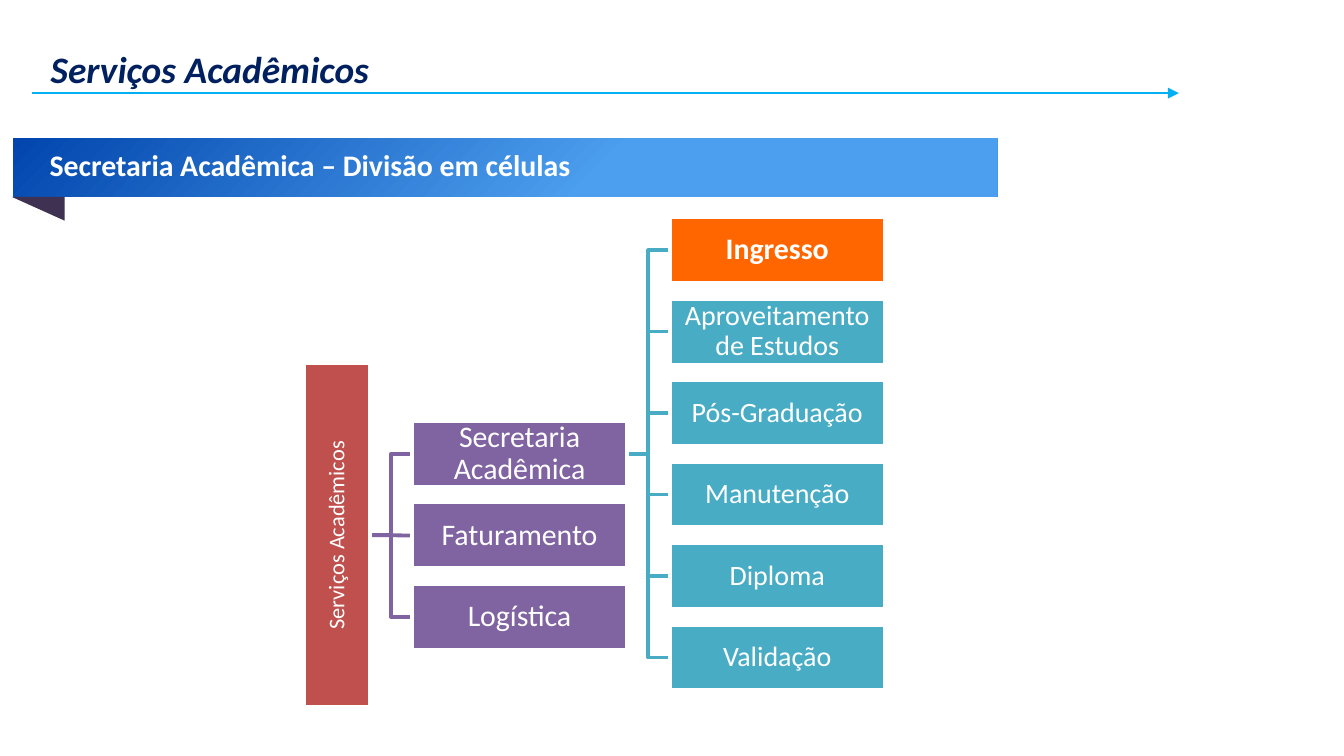
from lxml.etree import SubElement
from pptx import Presentation
from pptx.dml.color import RGBColor
from pptx.enum.shapes import MSO_CONNECTOR, MSO_SHAPE
from pptx.enum.text import MSO_ANCHOR, PP_ALIGN
from pptx.oxml.ns import qn
from pptx.util import Cm, Pt

TITLE = "Serviços Acadêmicos"
HEADING = "Secretaria Acadêmica – Divisão em células"
WHITE, NAVY, SKY = "FFFFFF", "002060", "00B0F0"
RED, PURPLE, TEAL, ORANGE = "BF504D", "8064A2", "49ACC5", "FF6600"

ROOT = "Serviços Acadêmicos"
AREAS = ["Secretaria Acadêmica", "Faturamento", "Logística"]
CELLS = ["Ingresso", "Aproveitamento de Estudos", "Pós-Graduação",
         "Manutenção", "Diploma", "Validação"]
HIGHLIGHT = "Ingresso"

# Organisation chart grid, in centimetres
BOX_W, BOX_H, PITCH = 4.06, 1.24, 1.54
ROOT_X, ROOT_H, ROOT_MID = 5.75, 6.5, 10.12
AREA_X, CELL_X = 7.79, 12.66


def color(hex_value):
    return RGBColor.from_string(hex_value)


def write(s, text, size, font_color=WHITE, bold=False, italic=False,
          align=PP_ALIGN.LEFT, inset=(0.25, 0.13), spacing=None):
    tf = s.text_frame
    tf.word_wrap = True
    tf.margin_left = tf.margin_right = Cm(inset[0])
    tf.margin_top = tf.margin_bottom = Cm(inset[1])
    p = tf.paragraphs[0]
    p.alignment = align
    p.line_spacing = spacing
    r = p.add_run()
    r.text = text
    r.font.name, r.font.size = "Calibri", Pt(size)
    r.font.bold, r.font.italic = bold, italic
    r.font.color.rgb = color(font_color)
    return tf


def add_shape(kind, x, y, w, h, fill=None):
    s = slide.shapes.add_shape(kind, Cm(x), Cm(y), Cm(w), Cm(h))
    s.shadow.inherit = False
    s.line.fill.background()
    if fill:
        s.fill.solid()
        s.fill.fore_color.rgb = color(fill)
    return s


def add_line(kind, start, end, line_color, width):
    c = slide.shapes.add_connector(kind, *(Cm(v) for v in (*start, *end)))
    c.line.color.rgb = color(line_color)
    c.line.width = Pt(width)
    SubElement(c._element.spPr, qn("a:effectLst"))
    return c


def add_box(text, x, mid, fill, size, w=BOX_W, h=BOX_H):
    s = add_shape(MSO_SHAPE.RECTANGLE, x, mid - h / 2, w, h, fill)
    s.line.color.rgb = color(WHITE)
    s.line.width = Pt(2)
    tf = write(s, text, size, bold=text == HIGHLIGHT, align=PP_ALIGN.CENTER,
               inset=(0.03, 0.03), spacing=0.9)
    tf.vertical_anchor = MSO_ANCHOR.MIDDLE
    return s


def column_mids(count, center):
    """Vertical middles of evenly spaced boxes around a center."""
    return [center + (i - (count - 1) / 2) * PITCH for i in range(count)]


def add_branches(x, mid, child_x, child_mids, line_color):
    """Draw the branches first, so that the boxes lie above them."""
    return [add_line(MSO_CONNECTOR.STRAIGHT if m == mid else MSO_CONNECTOR.ELBOW,
                     (x, mid), (child_x, m), line_color, 2) for m in child_mids]


def join(branches, parent, children):
    for branch, child in zip(branches, children):
        branch.begin_connect(parent, 3)
        branch.end_connect(child, 1)


prs = Presentation()
prs.slide_width, prs.slide_height = Cm(25.4), Cm(14.29)
slide = prs.slides.add_slide(prs.slide_layouts[6])

# Heading ribbon with its fold
ribbon = add_shape(MSO_SHAPE.RECTANGLE, 0.25, 2.61, 18.6, 1.1)
ribbon.fill.gradient()
ribbon.fill.gradient_angle = 315
for stop, position, shade in zip(ribbon.fill.gradient_stops, (0, 0.6),
                                 ("0246AD", "4C9EEE")):
    stop.position = position
    stop.color.rgb = color(shade)
tf = write(ribbon, HEADING, 16, bold=True, inset=(0.69, 0), spacing=0.9)
tf.vertical_anchor = MSO_ANCHOR.MIDDLE
fold = add_shape(MSO_SHAPE.RIGHT_TRIANGLE, 0.22, 3.72, 1, 0.45, "3F3151")
fold.rotation = 180

# Title with its arrow
title = slide.shapes.add_textbox(Cm(0.71), Cm(0.74), Cm(22.05), Cm(1.11))
write(title, TITLE, 20, NAVY, bold=True, italic=True)
arrow = add_line(MSO_CONNECTOR.STRAIGHT, (0.61, 1.76), (22.28, 1.76), SKY, 1)
SubElement(arrow.line._get_or_add_ln(), qn("a:tailEnd"), type="triangle")

# Organisation chart
area_mids = column_mids(len(AREAS), ROOT_MID)
cell_mids = column_mids(len(CELLS), area_mids[0])
area_branches = add_branches(ROOT_X + BOX_H, ROOT_MID, AREA_X, area_mids, PURPLE)
cell_branches = add_branches(AREA_X + BOX_W, area_mids[0], CELL_X, cell_mids, TEAL)

root = add_box(ROOT, ROOT_X, ROOT_MID, RED, 12, BOX_H, ROOT_H)
root.text_frame._txBody.bodyPr.set("vert", "vert270")
areas = [add_box(text, AREA_X, mid, PURPLE, 16)
         for text, mid in zip(AREAS, area_mids)]
cells = [add_box(text, CELL_X, mid, ORANGE if text == HIGHLIGHT else TEAL,
                 16 if text == HIGHLIGHT else 15)
         for text, mid in zip(CELLS, cell_mids)]
join(area_branches, root, areas)
join(cell_branches, areas[0], cells)

prs.save("out.pptx")
